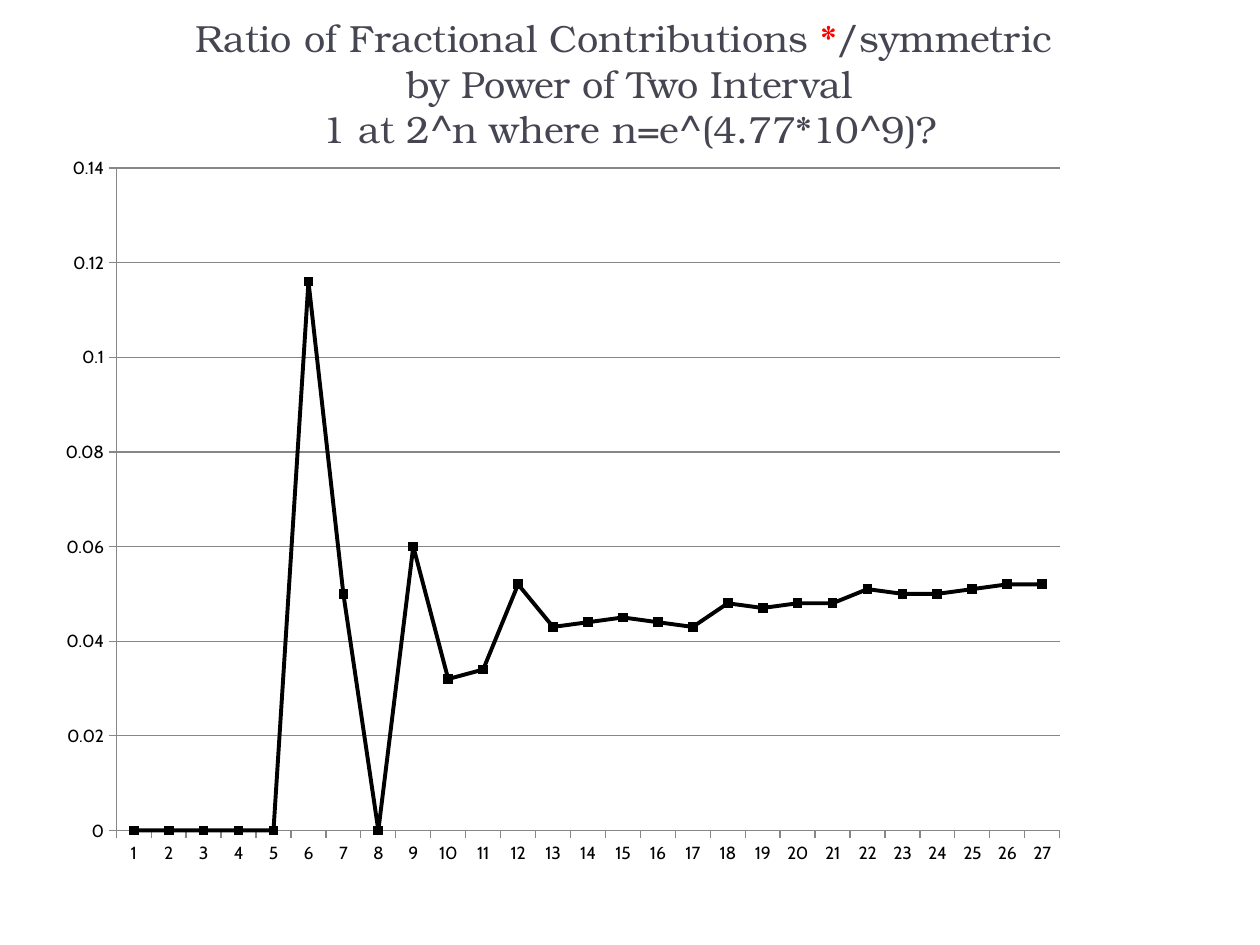
from dataclasses import dataclass

import pptx
import pptx.chart.data
import pptx.dml.color
import pptx.enum.chart
import pptx.enum.text
import pptx.oxml
import pptx.oxml.ns
import pptx.util

Pt = pptx.util.Pt
RGB = pptx.dml.color.RGBColor


@dataclass(frozen=True)
class Theme:
    """Fonts, type sizes and colours of the slide."""
    title_font: str = "TeX Gyre Bonum"
    chart_font: str = "Cabin"
    title_size: float = 21.6
    chart_size: float = 10
    heading: RGB = RGB(0x46, 0x46, 0x53)
    accent: RGB = RGB(0xFF, 0x00, 0x00)
    ink: RGB = RGB(0x00, 0x00, 0x00)
    grid: RGB = RGB(0x87, 0x87, 0x87)


THEME = Theme()

TITLE_LINES = [
    [("Ratio of Fractional Contributions ", THEME.heading),
     ("*", THEME.accent),
     ("/symmetric ", THEME.heading)],
    [("by Power of Two Interval", THEME.heading)],
    [("1 at 2^n where n=e^(4.77*10^9)?", THEME.heading)],
]

RATIOS = [0, 0, 0, 0, 0, 0.116, 0.05, 0, 0.06, 0.032, 0.034, 0.052, 0.043, 0.044,
          0.045, 0.044, 0.043, 0.048, 0.047, 0.048, 0.048, 0.051, 0.05, 0.05,
          0.051, 0.052, 0.052]


def set_title(slide, lines, left, top, width, height):
    """Fill the title placeholder with lines of coloured runs."""
    title = slide.shapes.title
    title.left, title.top, title.width, title.height = map(Pt, (left, top, width, height))
    frame = title.text_frame
    frame.word_wrap = True
    frame.auto_size = pptx.enum.text.MSO_AUTO_SIZE.NONE
    frame.vertical_anchor = pptx.enum.text.MSO_ANCHOR.BOTTOM
    heading = frame.paragraphs[0]
    heading.alignment = pptx.enum.text.PP_ALIGN.CENTER
    heading.font.name = THEME.title_font
    heading.font.size = Pt(THEME.title_size)
    for number, line in enumerate(lines):
        if number:
            heading.add_line_break()
        for wording, colour in line:
            run = heading.add_run()
            run.text = wording
            run.font.color.rgb = colour


def style_line(line, colour, width):
    """Give a line its colour and width."""
    line.color.rgb = colour
    line.width = Pt(width)


def set_plot_area(chart, x, y, w, h):
    """Place the inner plot area by fractions of the chart."""
    plot_area = chart.plots[0]._element.getparent()
    for layout in plot_area.findall(pptx.oxml.ns.qn("c:layout")):
        plot_area.remove(layout)
    modes = '<c:xMode val="edge"/><c:yMode val="edge"/>'
    sizes = "".join(f'<c:{key} val="{share}"/>'
                    for key, share in zip("xywh", (x, y, w, h)))
    plot_area.insert(0, pptx.oxml.parse_xml(
        f'<c:layout {pptx.oxml.ns.nsdecls("c")}><c:manualLayout>'
        f'<c:layoutTarget val="inner"/>{modes}{sizes}</c:manualLayout></c:layout>'))


def style_axes(chart):
    """Set the scale, ticks and gridlines of both axes."""
    for axis in (chart.category_axis, chart.value_axis):
        axis.major_tick_mark = pptx.enum.chart.XL_TICK_MARK.OUTSIDE
        axis.minor_tick_mark = pptx.enum.chart.XL_TICK_MARK.NONE
        style_line(axis.format.line, THEME.grid, 0.75)
    scale = chart.value_axis
    scale.minimum_scale, scale.maximum_scale, scale.major_unit = 0, 0.14, 0.02
    scale.has_major_gridlines = True
    style_line(scale.major_gridlines.format.line, THEME.grid, 0.75)


def add_ratio_chart(slide, ratios, left, top, width, height):
    """Add the line chart of ratios by interval."""
    data = pptx.chart.data.CategoryChartData()
    data.categories = [str(n) for n in range(1, len(ratios) + 1)]
    data.add_series("Series 1", ratios)
    chart = slide.shapes.add_chart(
        pptx.enum.chart.XL_CHART_TYPE.LINE_MARKERS_STACKED,
        *map(Pt, (left, top, width, height)), data).chart
    chart.has_legend = False
    chart.has_title = False
    chart.font.name = THEME.chart_font
    chart.font.size = Pt(THEME.chart_size)
    chart.font.color.rgb = THEME.ink
    chart.plots[0].vary_by_categories = False
    set_plot_area(chart, 0.047, 0.014, 0.832, 0.915)
    style_axes(chart)

    ratio = chart.plots[0].series[0]
    ratio.smooth = False
    style_line(ratio.format.line, THEME.ink, 2.25)
    ratio.marker.style = pptx.enum.chart.XL_MARKER_STYLE.SQUARE
    ratio.marker.size = 5
    ratio.marker.format.fill.solid()
    ratio.marker.format.fill.fore_color.rgb = THEME.ink
    style_line(ratio.marker.format.line, THEME.ink, 0.75)


def main():
    """Build the slide and save it."""
    deck = pptx.Presentation()
    deck.slide_width, deck.slide_height = Pt(720), Pt(540)
    slide = deck.slides.add_slide(deck.slide_layouts.get_by_name("Title Only"))
    set_title(slide, TITLE_LINES, 36, 18, 648, 72)
    add_ratio_chart(slide, RATIOS, 36, 90, 648, 414)
    deck.save("out.pptx")


if __name__ == "__main__":
    main()
